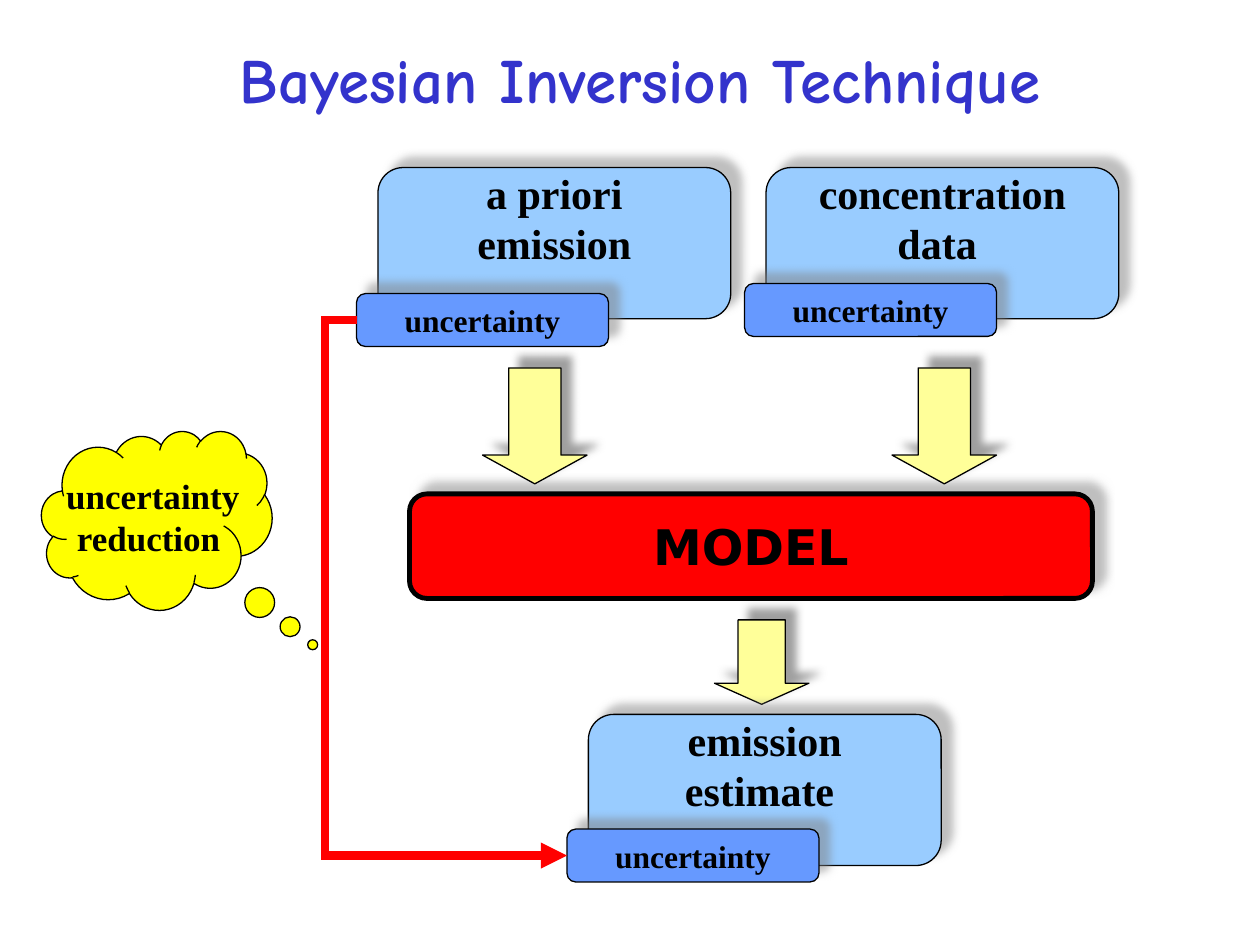
from lxml import etree
from pptx import Presentation
from pptx.dml.color import RGBColor
from pptx.enum.shapes import MSO_CONNECTOR, MSO_SHAPE
from pptx.enum.text import MSO_ANCHOR, PP_ALIGN
from pptx.oxml import parse_xml
from pptx.oxml.ns import nsdecls, qn
from pptx.util import Inches, Pt

ROUNDED = MSO_SHAPE.ROUNDED_RECTANGLE
DOWN_ARROW = MSO_SHAPE.DOWN_ARROW
CLOUD = MSO_SHAPE.CLOUD_CALLOUT
ELBOW = MSO_CONNECTOR.ELBOW
CENTER = PP_ALIGN.CENTER
MIDDLE = MSO_ANCHOR.MIDDLE


def write(s, text, size, font="Times New Roman", color="000000",
          wrap=False, bottom=0.05):
    """Fill a shape with centred bold text, one paragraph per line."""
    tf = s.text_frame
    tf.word_wrap = wrap
    tf.vertical_anchor = MIDDLE
    tf.margin_bottom = Inches(bottom)
    for i, line in enumerate(text.split("\n")):
        p = tf.paragraphs[0] if i == 0 else tf.add_paragraph()
        p.alignment = CENTER
        r = p.add_run()
        r.text = line
        r.font.size = Pt(size)
        r.font.name = font
        r.font.bold = True
        r.font.color.rgb = RGBColor.from_string(color)


def add_block(kind, x, y, w, h, fill, line=0.75, adj=(), shadow=None):
    """Add a black-outlined shape; shadow is its opacity in percent."""
    s = slide.shapes.add_shape(kind, Inches(x), Inches(y), Inches(w), Inches(h))
    for i, value in enumerate(adj):
        s.adjustments[i] = value
    s.fill.solid()
    s.fill.fore_color.rgb = RGBColor.from_string(fill)
    s.line.color.rgb = RGBColor.from_string("000000")
    s.line.width = Pt(line)
    s.shadow.inherit = False
    if shadow:
        effects = s._element.spPr.find(qn("a:effectLst"))
        effects.append(parse_xml(
            f'<a:outerShdw {nsdecls("a")} blurRad="{Pt(5)}" dist="{Pt(8.5)}" '
            f'dir="18900000" algn="ctr" rotWithShape="0"><a:srgbClr val="808080">'
            f'<a:alpha val="{shadow * 1000}"/></a:srgbClr></a:outerShdw>'))
    return s


prs = Presentation()
prs.slide_width, prs.slide_height = Inches(10), Inches(7.5)
slide = prs.slides.add_slide(prs.slide_layouts[6])

# Title
s = slide.shapes.add_textbox(Inches(0.83), Inches(0), Inches(8.5), Inches(1.25))
write(s, "Bayesian Inversion Technique", 36, font="Comic Neue",
      color="3333CC", wrap=True)

# Model
s = add_block(ROUNDED, 3.25, 3.92, 5.42, 0.83, "FF0000", line=2.75,
              adj=[0.167], shadow=50)
write(s, "MODEL", 28, font="DejaVu Sans")

# Flow arrows into and out of the model
for x, y, w, h, head in [(3.83, 2.92, 0.83, 0.92, 0.275),
                         (7.08, 2.92, 0.83, 0.92, 0.275),
                         (5.67, 4.92, 0.75, 0.67, 0.25)]:
    add_block(DOWN_ARROW, x, y, w, h, "FFFF99", adj=[0.5, head], shadow=75)

# Data boxes, each with an uncertainty tag overhanging its lower left corner;
# the deep bottom margin lifts the label clear of the tag
for text, x, y, tag_y in [("a priori\nemission", 3, 1.33, 2.33),
                          ("concentration\ndata ", 6.08, 1.33, 2.25),
                          ("emission\nestimate ", 4.67, 5.67, 6.58)]:
    s = add_block(ROUNDED, x, y, 2.8, 1.2, "99CCFF", adj=[0.167], shadow=50)
    write(s, text, 24, bottom=0.45)
    s = add_block(ROUNDED, x - 0.17, tag_y, 2, 0.42, "6699FF", adj=[0.167], shadow=50)
    write(s, "uncertainty", 18)

# Uncertainty reduction: thought cloud and feedback arrow
s = add_block(CLOUD, 0.33, 3.42, 1.83, 1.42, "FFFF00", adj=[0.676, 0.695])
write(s, " uncertainty\nreduction", 20)

feedback = slide.shapes.add_connector(
    ELBOW, Inches(2.83), Inches(2.54), Inches(4.5), Inches(6.79))
feedback.line.color.rgb = RGBColor.from_string("FF0000")
feedback.line.width = Pt(5)
spPr = feedback._element.spPr
ln = spPr.find(qn("a:ln"))
etree.SubElement(ln, qn("a:miter"), lim="800000")
etree.SubElement(ln, qn("a:tailEnd"), type="triangle")
etree.SubElement(spPr, qn("a:effectLst"))
guides = spPr.find(qn("a:prstGeom")).get_or_add_avLst()
etree.SubElement(guides, qn("a:gd"), name="adj1", fmla="val -15000")

prs.save("out.pptx")
